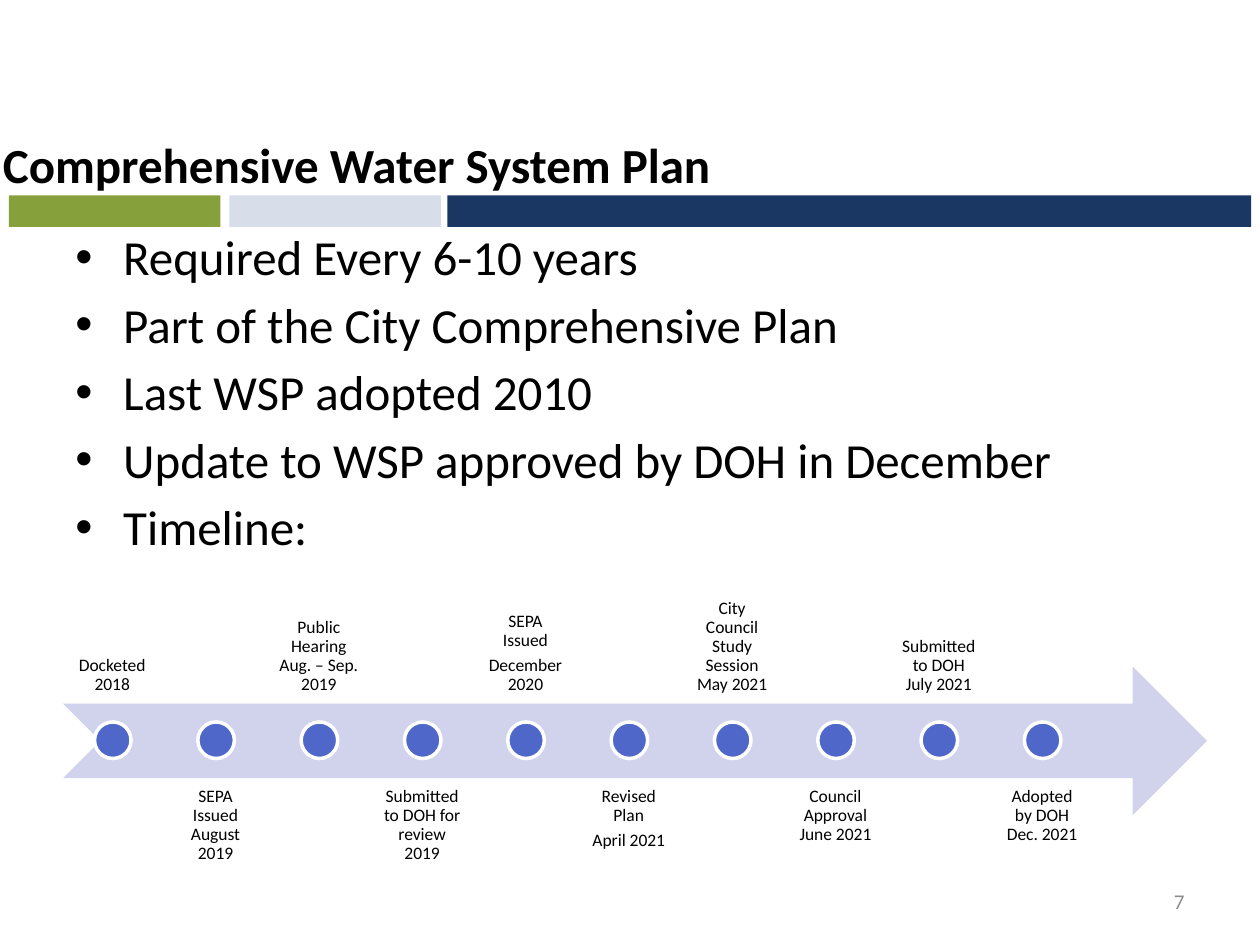
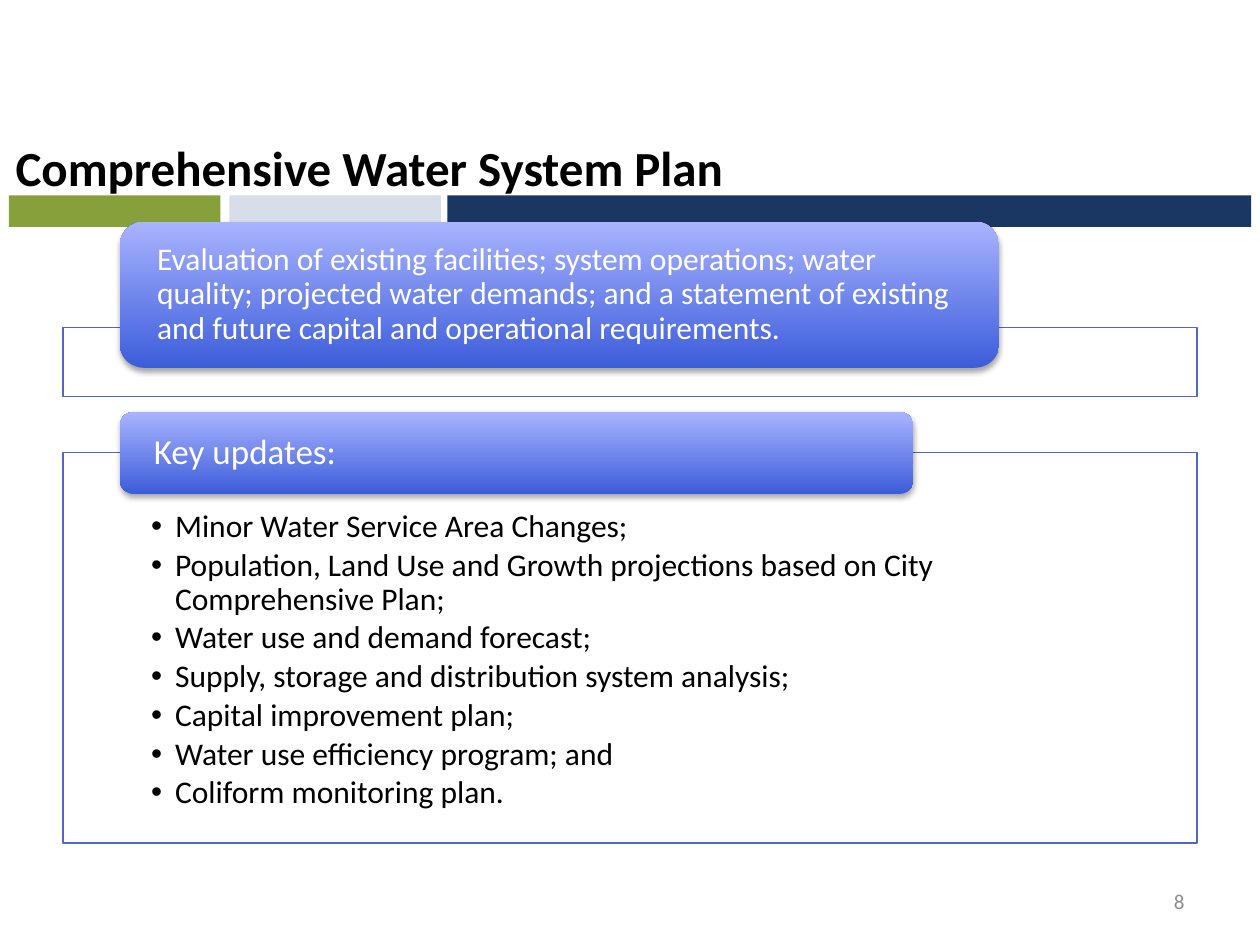
from typing import NamedTuple

from lxml import etree
from pptx import Presentation
from pptx.dml.color import RGBColor
from pptx.enum.shapes import MSO_SHAPE
from pptx.enum.text import MSO_ANCHOR, MSO_AUTO_SIZE, PP_ALIGN
from pptx.oxml.ns import qn
from pptx.util import Pt

PX = 9144  # 100 px to the inch
FONT = "Calibri"
TITLE = "Comprehensive Water System Plan"
BLACK, WHITE, GREY = "000000", "FFFFFF", "8C8C8C"
BLUE, PALE = "4E67C8", "D0D3EB"
DEEP, LIGHT = "3C5CDA", "A9B4FF"

RECT, ROUND = MSO_SHAPE.RECTANGLE, MSO_SHAPE.ROUNDED_RECTANGLE
OVAL, ARROW = MSO_SHAPE.OVAL, MSO_SHAPE.NOTCHED_RIGHT_ARROW
LEFT, MID, RIGHT = PP_ALIGN.LEFT, PP_ALIGN.CENTER, PP_ALIGN.RIGHT
TOP, CENTRE, BASE = MSO_ANCHOR.TOP, MSO_ANCHOR.MIDDLE, MSO_ANCHOR.BOTTOM


class Box(NamedTuple):
    x: int
    y: int
    w: int
    h: int

    def emu(self) -> list[int]:
        return [v * PX for v in self]


class Band(NamedTuple):
    box: Box
    color: str


class Card(NamedTuple):
    frame: Box
    head: Box
    text: str
    size: int
    items: list[str]


BANDS = [
    Band(Box(355, 155, 638, 25), "1A3662"),
    Band(Box(7, 155, 168, 25), "86A13C"),
    Band(Box(182, 155, 168, 25), "D7DEEA"),
]
FACTS = [
    "Required Every 6-10 years",
    "Part of the City Comprehensive Plan",
    "Last WSP adopted 2010",
    "Update to WSP approved by DOH in December",
    "Timeline:",
]
STEPS = [
    ["Docketed 2018"],
    ["SEPA Issued August 2019"],
    ["Public Hearing Aug. – Sep. 2019"],
    ["Submitted to DOH for review 2019"],
    ["SEPA Issued", "December 2020"],
    ["Revised Plan", "April 2021"],
    ["City Council Study Session May 2021"],
    ["Council Approval June 2021"],
    ["Submitted to DOH July 2021"],
    ["Adopted by DOH Dec. 2021"],
]
CARDS = [
    Card(Box(50, 260, 900, 55), Box(95, 176, 698, 116),
         "Evaluation of existing facilities; system operations; water quality; "
         "projected water demands; and a statement of existing and future "
         "capital and operational requirements.", 18, []),
    Card(Box(50, 359, 900, 310), Box(95, 327, 630, 65), "Key updates:", 20, [
        "Minor Water Service Area Changes;",
        "Population, Land Use and Growth projections based on City "
        "Comprehensive Plan;",
        "Water use and demand forecast;",
        "Supply, storage and distribution system analysis;",
        "Capital improvement plan;",
        "Water use efficiency program; and",
        "Coliform monitoring plan.",
    ]),
]


def rgb(code: str) -> RGBColor:
    return RGBColor.from_string(code)


def write(shape, lines: list[str], *, size: int, color: str = BLACK,
          bold: bool = False, align=LEFT, anchor=TOP, pad=(10, 5, 10, 5),
          before: float = 0, after: float = 0, lead: float = 1,
          hang: int = 0) -> None:
    """Fill a shape with paragraphs; hang is the bullet indent in px."""
    frame = shape.text_frame
    frame.word_wrap = True
    frame.auto_size = MSO_AUTO_SIZE.NONE
    frame.vertical_anchor = anchor
    (frame.margin_left, frame.margin_top,
     frame.margin_right, frame.margin_bottom) = [v * PX for v in pad]
    for i, line in enumerate(lines):
        para = frame.add_paragraph() if i else frame.paragraphs[0]
        para.alignment, para.line_spacing = align, lead
        para.space_before, para.space_after = Pt(before), Pt(after)
        run = para.add_run()
        run.text = line
        font = run.font
        font.name, font.size, font.bold = FONT, Pt(size), bold
        font.color.rgb = rgb(color)
        if hang:
            props = para._p.get_or_add_pPr()
            props.set("marL", str(hang * PX))
            props.set("indent", str(-hang * PX))
            etree.SubElement(props, qn("a:buFont")).set("typeface", "Arial")
            etree.SubElement(props, qn("a:buChar")).set("char", "•")


def label(slide, box: Box, lines: list[str], **style) -> None:
    write(slide.shapes.add_textbox(*box.emu()), lines, **style)


def draw(slide, kind, box: Box, fill: str, line: str = "", width: float = 1):
    shape = slide.shapes.add_shape(kind, *box.emu())
    shape.shadow.inherit = False
    shape.fill.solid()
    shape.fill.fore_color.rgb = rgb(fill)
    if line:
        shape.line.color.rgb = rgb(line)
        shape.line.width = Pt(width)
    else:
        shape.line.fill.background()
    return shape


def fade(color, share: int) -> None:
    """Add an opacity in percent to a colour element."""
    etree.SubElement(color, qn("a:alpha")).set("val", str(share * 1000))


def gloss(shape) -> None:
    """Give a shape the blue gradient and a soft shadow below."""
    shape.fill.gradient()
    shape.fill.gradient_angle = 90
    for stop, code in zip(shape.fill.gradient_stops, (DEEP, LIGHT)):
        stop.color.rgb = rgb(code)
    effects = shape.element.spPr.find(qn("a:effectLst"))
    shade = etree.SubElement(effects, qn("a:outerShdw"), blurRad="40000",
                             dist="23000", dir="5400000", rotWithShape="0")
    fade(etree.SubElement(shade, qn("a:srgbClr"), val=BLACK), 35)


def start(deck, x: int, y: int, number: int):
    """Add a slide with bands, title and page number."""
    slide = deck.slides.add_slide(deck.slide_layouts[5])
    for band in BANDS:
        draw(slide, RECT, band.box, band.color)
    title = slide.shapes.title
    title.left, title.top, title.width, title.height = Box(x, y, 900, 125).emu()
    write(title, [TITLE], size=28, bold=True, align=MID, anchor=CENTRE)
    title.element.getparent().append(title.element)  # above the bands
    label(slide, Box(717, 695, 233, 40), [str(number)], size=12, color=GREY,
          align=RIGHT, anchor=CENTRE)
    return slide


def add_plan(deck) -> None:
    slide = start(deck, -167, 68, 7)
    label(slide, Box(50, 175, 900, 495), FACTS, size=28, before=5, hang=38)
    draw(slide, ARROW, Box(50, 529, 908, 118), PALE)
    for i, lines in enumerate(STEPS):
        x = 50 + 82 * i
        y, anchor = (617, TOP) if i % 2 else (441, BASE)
        label(slide, Box(x, y, 78, 118), lines, size=10, align=MID,
              anchor=anchor, pad=(7, 8, 7, 8), after=3.5, lead=0.9)
        draw(slide, OVAL, Box(x + 25, 573, 29, 29), BLUE, WHITE, 2)


def add_scope(deck) -> None:
    slide = start(deck, -157, 70, 8)
    for card in CARDS:
        frame = draw(slide, RECT, card.frame, WHITE, BLUE, 0.75)
        fade(frame.element.spPr.find(qn("a:solidFill"))[0], 90)
        if card.items:
            write(frame, card.items, size=18, pad=(70, 46, 70, 14),
                  after=2.7, lead=0.9, hang=19)
        head = draw(slide, ROUND, card.head, BLUE)
        gloss(head)
        write(head, [card.text], size=card.size, color=WHITE, anchor=CENTRE,
              pad=(24, 0, 24, 0), lead=0.9)


def main() -> None:
    deck = Presentation()
    deck.slide_width, deck.slide_height = 1000 * PX, 750 * PX
    add_plan(deck)
    add_scope(deck)
    deck.save("out.pptx")


if __name__ == "__main__":
    main()
